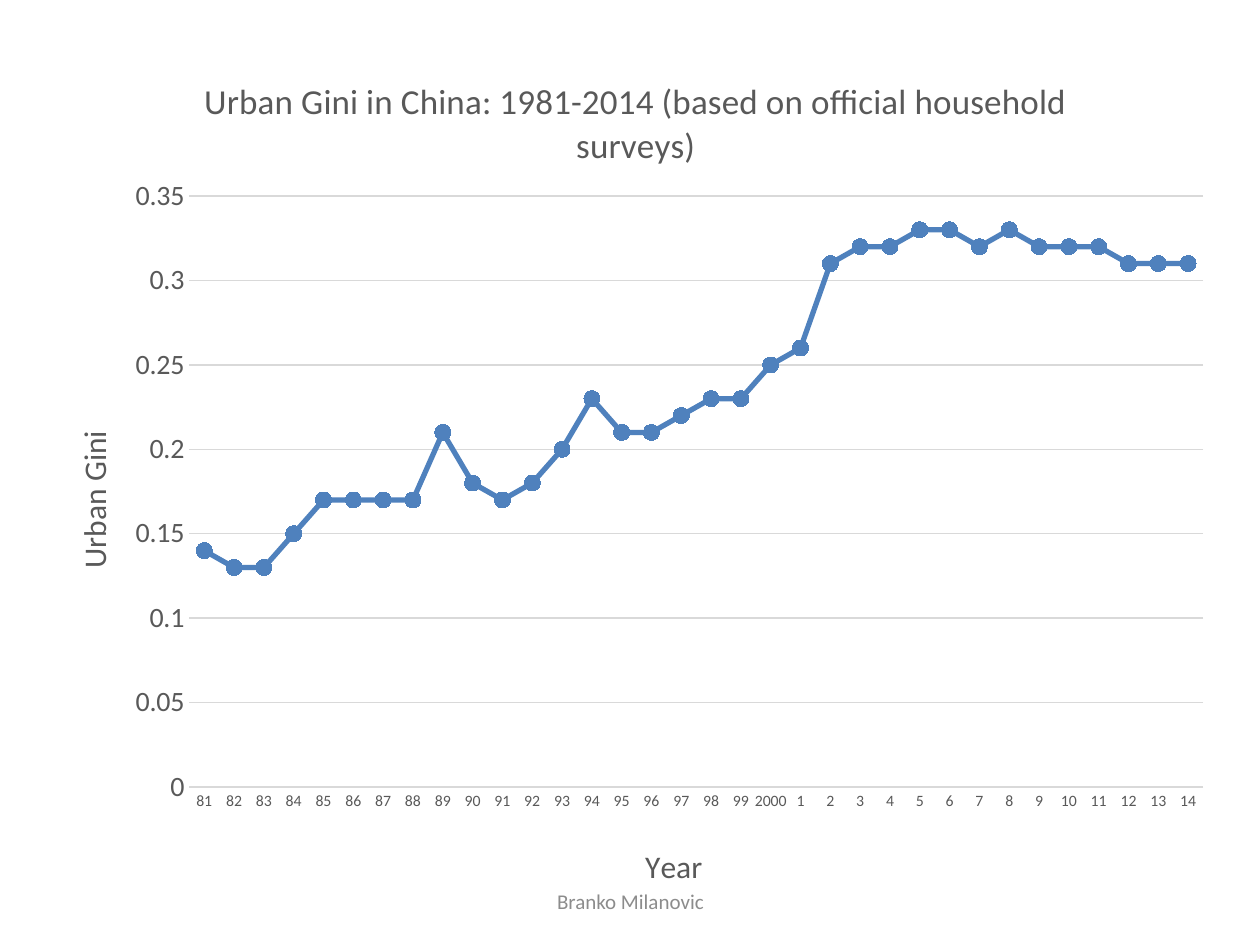
from dataclasses import dataclass
from typing import Any

from lxml.etree import SubElement
from pptx import Presentation
from pptx.chart.data import CategoryChartData
from pptx.dml.color import RGBColor
from pptx.enum.chart import XL_CHART_TYPE, XL_MARKER_STYLE, XL_TICK_MARK
from pptx.enum.text import MSO_ANCHOR, PP_ALIGN
from pptx.oxml.ns import qn
from pptx.util import Emu, Pt

PX = 914400 / 126
FONT = "Calibri"
COLORS = {"text": "595959", "footer": "8C8C8C", "grid": "D9D9D9", "series": "4F81BD"}

YEARS = [str(year) for year in (*range(81, 100), 2000, *range(1, 15))]
URBAN_GINI = [
    0.14, 0.13, 0.13, 0.15, 0.17, 0.17, 0.17, 0.17, 0.21, 0.18, 0.17, 0.18,
    0.20, 0.23, 0.21, 0.21, 0.22, 0.23, 0.23, 0.25, 0.26, 0.31, 0.32, 0.32,
    0.33, 0.33, 0.32, 0.33, 0.32, 0.32, 0.32, 0.31, 0.31, 0.31,
]


@dataclass(frozen=True)
class Box:
    left: int
    top: int
    width: int = 0
    height: int = 0

    def emu(self) -> list[Emu]:
        return [px(n) for n in (self.left, self.top, self.width, self.height)]


@dataclass(frozen=True)
class ChartTitle:
    owner: Any
    text: str
    size: int
    place: Box


FOOTER = Box(431, 876, 399, 50)
CHART = Box(33, 39, 1194, 868)
PLOT = Box(190, 196, 1014, 591)


def px(length: int) -> Emu:
    return Emu(round(length * PX))


def color(name: str) -> RGBColor:
    return RGBColor.from_string(COLORS[name])


def set_all(target: Any, values: dict[str, Any]) -> None:
    for name, value in values.items():
        setattr(target, name, value)


def format_font(font: Any, size: int, color_name: str = "text") -> None:
    set_all(font, {"name": FONT, "size": Pt(size), "bold": False})
    font.color.rgb = color(color_name)


def format_line(line: Any, color_name: str, width: float) -> None:
    line.color.rgb = color(color_name)
    line.width = Pt(width)


def place_in_chart(element: Any, position: int, box: Box) -> None:
    """Give a chart part a manual layout, as fractions of the chart area."""
    for old in element.findall(qn("c:layout")):
        element.remove(old)
    layout = SubElement(element, qn("c:layout"))
    element.insert(position, layout)
    manual = SubElement(layout, qn("c:manualLayout"))
    values: dict[str, Any] = {"xMode": "edge", "yMode": "edge"}
    if box.width:
        values = {"layoutTarget": "inner", **values}
    values["x"] = round((box.left - CHART.left) / CHART.width, 3)
    values["y"] = round((box.top - CHART.top) / CHART.height, 3)
    if box.width:
        values["w"] = round(box.width / CHART.width, 3)
        values["h"] = round(box.height / CHART.height, 3)
    for name, value in values.items():
        SubElement(manual, qn(f"c:{name}")).set("val", str(value))


def add_title(title: ChartTitle) -> None:
    frame = title.owner.text_frame
    frame.text = title.text
    format_font(frame.paragraphs[0].runs[0].font, title.size)
    place_in_chart(title.owner._element, 1, title.place)


def add_footer(slide: Any) -> None:
    frame = slide.shapes.add_textbox(*FOOTER.emu()).text_frame
    set_all(frame, {"word_wrap": True, "vertical_anchor": MSO_ANCHOR.MIDDLE})
    paragraph = frame.paragraphs[0]
    paragraph.text = "Branko Milanovic"
    paragraph.alignment = PP_ALIGN.CENTER
    format_font(paragraph.runs[0].font, 12, "footer")


def format_axes(chart: Any) -> None:
    for axis, size in ((chart.category_axis, 9), (chart.value_axis, 16)):
        set_all(axis, {"major_tick_mark": XL_TICK_MARK.NONE,
                       "minor_tick_mark": XL_TICK_MARK.NONE})
        format_font(axis.tick_labels.font, size)
    format_line(chart.category_axis.format.line, "grid", 0.75)
    value_axis = chart.value_axis
    set_all(value_axis, {"minimum_scale": 0, "maximum_scale": 0.35, "major_unit": 0.05,
                         "has_major_gridlines": True})
    value_axis.format.line.fill.background()
    format_line(value_axis.major_gridlines.format.line, "grid", 0.75)


def format_series(series: Any) -> None:
    series.smooth = False
    format_line(series.format.line, "series", 3)
    marker = series.marker
    set_all(marker, {"style": XL_MARKER_STYLE.CIRCLE, "size": 9})
    marker.format.fill.solid()
    marker.format.fill.fore_color.rgb = color("series")
    format_line(marker.format.line, "series", 0.75)


def add_gini_chart(slide: Any) -> None:
    data = CategoryChartData(number_format="General")
    data.categories = YEARS
    data.add_series("Series 1", URBAN_GINI)
    chart = slide.shapes.add_chart(
        XL_CHART_TYPE.LINE_MARKERS_STACKED, *CHART.emu(), data).chart
    chart.has_legend = False
    chart.plots[0].vary_by_categories = False
    format_font(chart.font, 10)
    format_axes(chart)
    format_series(chart.plots[0].series[0])
    place_in_chart(chart._chartSpace.chart.plotArea, 0, PLOT)
    for title in (
        ChartTitle(chart.chart_title,
                   "Urban Gini in China: 1981-2014 (based on official household surveys)",
                   20, Box(198, 70)),
        ChartTitle(chart.category_axis.axis_title, "Year", 18, Box(640, 839)),
        ChartTitle(chart.value_axis.axis_title, "Urban Gini", 18, Box(67, 425)),
    ):
        add_title(title)


def main() -> None:
    presentation = Presentation()
    set_all(presentation, {"slide_width": px(1260), "slide_height": px(945)})
    slide = presentation.slides.add_slide(presentation.slide_layouts[6])
    add_footer(slide)
    add_gini_chart(slide)
    presentation.save("out.pptx")


if __name__ == "__main__":
    main()
